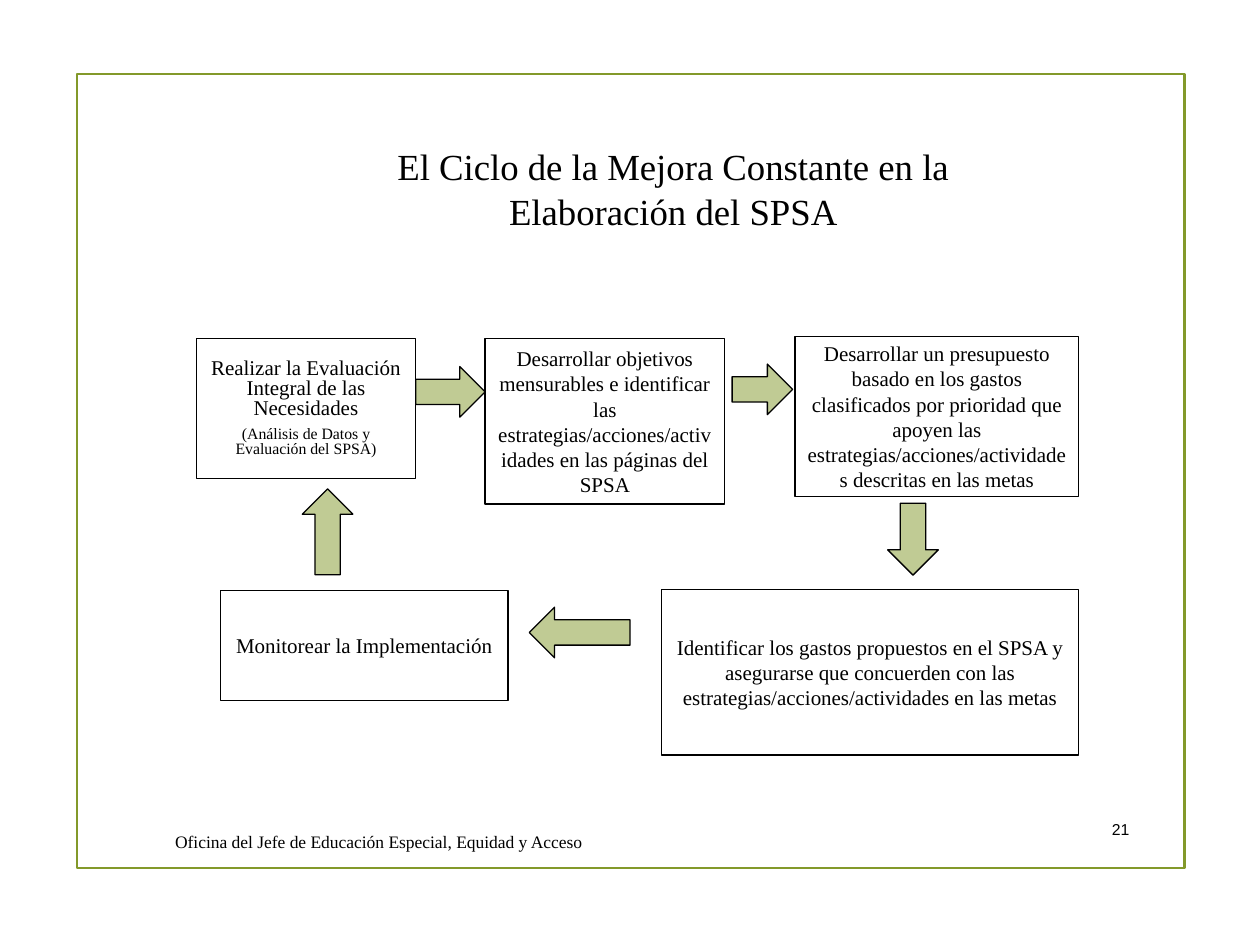
from lxml import etree
from pptx import Presentation
from pptx.dml.color import RGBColor
from pptx.enum.shapes import MSO_SHAPE
from pptx.enum.text import MSO_ANCHOR, MSO_AUTO_SIZE, PP_ALIGN
from pptx.oxml.ns import qn
from pptx.util import Cm, Pt

RECT, ARROW = MSO_SHAPE.RECTANGLE, MSO_SHAPE.RIGHT_ARROW
LEFT, MID, RIGHT = PP_ALIGN.LEFT, PP_ALIGN.CENTER, PP_ALIGN.RIGHT
SERIF, SANS = "Times New Roman", "Arial"
GREEN, BLACK, WHITE = "83992A", "000000", "FFFFFF"


def color(code):
    return RGBColor.from_string(code)


def place(at):
    return [Cm(x) for x in at]


class Page:
    """Holds the slide and its look."""

    def __init__(self, slide):
        self.slide = slide
        self.shapes = slide.shapes

    def words(self, frame, lines, align=MID, font=SERIF, space=None):
        """Fill a text frame with (text, size) lines."""
        look = {"word_wrap": True, "auto_size": MSO_AUTO_SIZE.NONE,
                "vertical_anchor": MSO_ANCHOR.MIDDLE}
        for name, value in look.items():
            setattr(frame, name, value)
        for i, (text, size) in enumerate(lines):
            para = frame.add_paragraph() if i else frame.paragraphs[0]
            para.text = text
            para.alignment = align
            para.line_spacing = space
            if i:
                para.space_before = Pt(size / 2)
            for name, value in {"name": font, "size": Pt(size), "bold": False}.items():
                setattr(para.font, name, value)
            para.font.color.rgb = color(BLACK)

    def title(self, at, text, size):
        head = self.shapes.title
        head.left, head.top, head.width, head.height = place(at)
        frame = head.text_frame
        frame.margin_left = frame.margin_right = Cm(0.2)
        frame.margin_top = frame.margin_bottom = Cm(0.1)
        self.words(frame, [(text, size)])

    def label(self, at, text, size, align, font):
        box = self.shapes.add_textbox(*place(at))
        self.words(box.text_frame, [(text, size)], align, font)

    def shape(self, kind, at, fill, line, width):
        item = self.shapes.add_shape(kind, *place(at))
        item.shadow.inherit = False
        if fill:
            item.fill.solid()
            item.fill.fore_color.rgb = color(fill)
        else:
            item.fill.background()
        item.line.color.rgb = color(line)
        item.line.width = Pt(width)
        return item

    def border(self, at):
        self.shape(RECT, at, None, GREEN, 1.25)

    def step(self, at, lines, space=None):
        box = self.shape(RECT, at, WHITE, BLACK, 0.75)
        self.words(box.text_frame, lines, space=space)

    def arrow(self, at, turn):
        item = self.shape(ARROW, at, GREEN, BLACK, 0)
        item.rotation = turn
        tint = item.element.spPr.find(qn("a:solidFill"))[0]
        etree.SubElement(tint, qn("a:alpha")).set("val", "50000")


STEPS = [
    ((3.96, 6.83, 4.42, 2.82),
     [("Realizar la Evaluación Integral de las Necesidades", 12),
      ("(Análisis de Datos y Evaluación del SPSA)", 9)], 0.8),
    ((9.78, 6.83, 4.83, 3.33),
     [("Desarrollar objetivos mensurables e identificar las "
       "estrategias/acciones/actividades en las páginas del SPSA", 12)], None),
    ((16.03, 6.78, 5.72, 3.23),
     [("Desarrollar un presupuesto basado en los gastos clasificados por "
       "prioridad que apoyen las estrategias/acciones/actividades "
       "descritas en las metas", 12)], None),
    ((13.34, 11.89, 8.41, 3.33),
     [("Identificar los gastos propuestos en el SPSA y asegurarse que "
       "concuerden con las estrategias/acciones/actividades en las metas", 12)], None),
    ((4.45, 11.91, 5.79, 2.21), [("Monitorear la Implementación", 12)], None),
]
ARROWS = [  # left, top, length, turn
    (8.38, 7.39, 1.4, 0),
    (14.76, 7.34, 1.22, 0),
    (17.68, 10.36, 1.45, 90),
    (10.67, 12.24, 2.03, 180),
    (5.74, 10.21, 1.73, 270),
]


def main():
    deck = Presentation()
    deck.slide_width, deck.slide_height = Cm(25.4), Cm(19.05)
    page = Page(deck.slides.add_slide(deck.slide_layouts[5]))
    page.border((1.55, 1.5, 22.33, 16))
    page.title((6.35, 2.84, 14.45, 1.91),
               "El Ciclo de la Mejora Constante en la Elaboración del SPSA", 21)
    for at, lines, space in STEPS:
        page.step(at, lines, space)
    for left, top, size, turn in ARROWS:
        page.arrow((left, top, size, 1.02), turn)
    page.label((16.03, 16.23, 6.99, 0.99), "21", 9, RIGHT, SANS)
    page.label((3.28, 16.56, 14.17, 0.79),
               "Oficina del Jefe de Educación Especial, Equidad y Acceso",
               10, LEFT, SERIF)
    deck.save("out.pptx")


if __name__ == "__main__":
    main()
